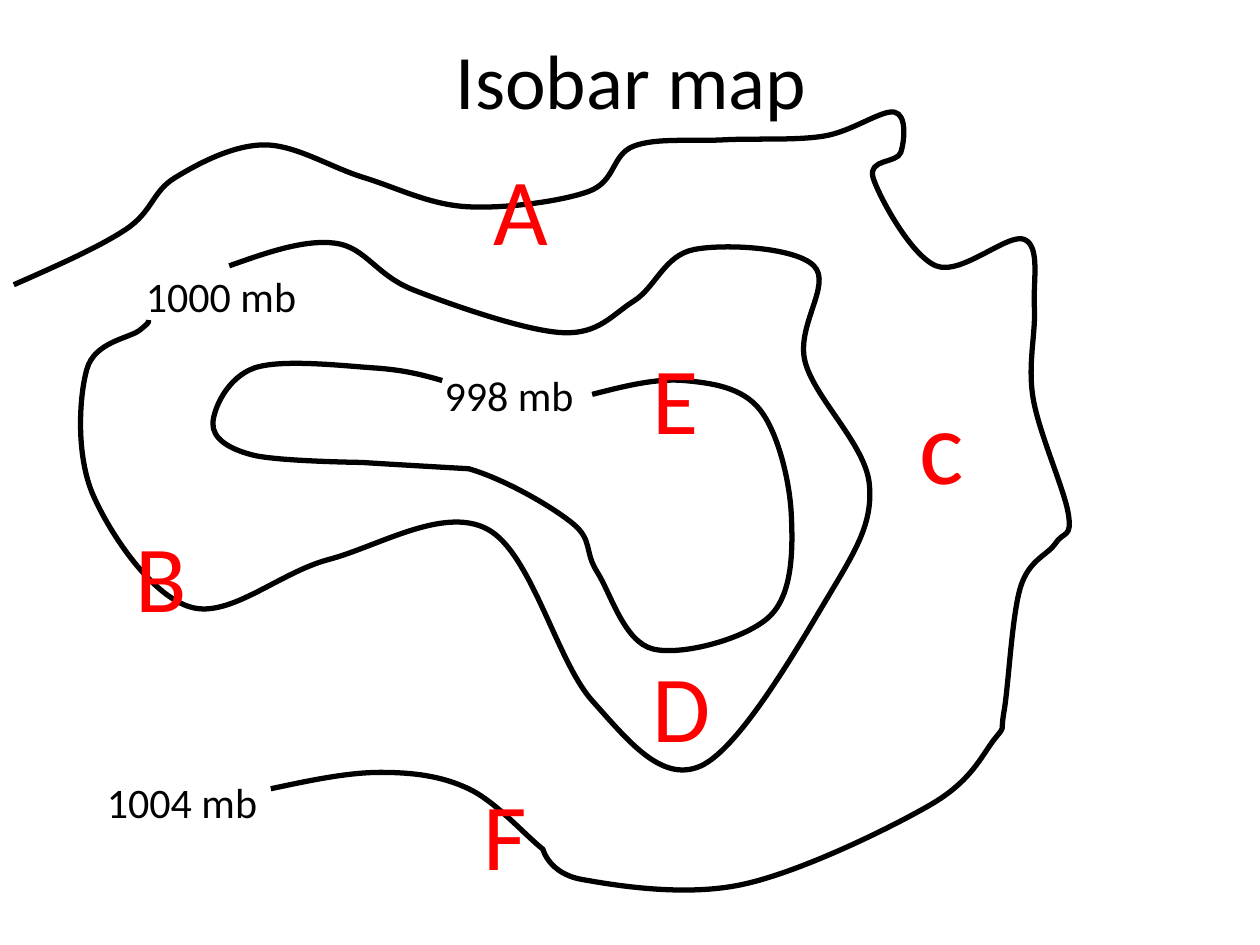
from dataclasses import dataclass

from pptx import Presentation
from pptx.dml.color import RGBColor
from pptx.enum.text import MSO_ANCHOR, MSO_AUTO_SIZE, PP_ALIGN
from pptx.oxml.ns import qn
from pptx.util import Inches, Pt

BLACK = RGBColor(0, 0, 0)
RED = RGBColor(255, 0, 0)
FONT = "Calibri"
LINE_SPACING = 1.22
TEXT_PADDING = 0.1
LABEL_WIDTH, LABEL_SIZE = 1.42, 24
LETTER_WIDTH, LETTER_SIZE, LARGE_LETTER_SIZE = 0.79, 54, 60


@dataclass
class Isobar:
    label: str
    label_position: tuple
    knots: list
    corners: tuple = ()


ISOBARS = [
    Isobar("1000 mb", (1.06, 2.1), [
        (1.82, 2.11), (2.66, 1.93), (3.28, 2.3), (4.46, 2.64), (5.03, 2.39),
        (5.51, 1.98), (6.46, 2.11), (6.39, 2.87), (6.9, 3.84), (6.57, 4.74),
        (5.56, 6.08), (4.7, 5.56), (3.87, 4.2), (2.61, 4.44), (1.52, 4.82),
        (0.74, 3.93), (0.69, 2.93), (1.11, 2.62), (1.18, 2.54)]),
    Isobar("1004 mb", (0.75, 6.11), [
        (0.11, 2.26), (1, 1.82), (1.39, 1.41), (2.1, 1.15), (2.89, 1.41),
        (3.7, 1.64), (4.67, 1.52), (5.03, 1.16), (5.74, 1.11), (6.54, 1.08),
        (7.1, 0.89), (7.15, 1.21), (6.93, 1.41), (7.43, 2.11), (8.13, 1.9),
        (8.21, 2.44), (8.2, 3.16), (8.48, 4.08), (8.38, 4.31), (8.1, 4.66),
        (7.97, 5.64), (7.89, 5.87), (7.38, 6.39), (5.89, 7.02), (4.62, 6.98),
        (4.31, 6.74), (3.72, 6.26), (3.02, 6.13), (2.15, 6.26)],
        corners=((4.31, 6.74),)),
    Isobar("998 mb", (3.43, 2.88), [
        (3.51, 3.02), (2.97, 2.92), (2.02, 2.92), (1.69, 3.36), (2, 3.61),
        (2.87, 3.67), (3.72, 3.72), (4.54, 4.15), (4.74, 4.54), (5.18, 5.15),
        (6.11, 4.89), (6.28, 4.08), (6.03, 3.25), (5.43, 3.02), (4.7, 3.13)],
        corners=((2.87, 3.67), (3.72, 3.72))),
]
LETTER_POSITIONS = {
    "c": (7.2, 2.96),
    "B": (0.98, 4.06),
    "A": (3.82, 1.15),
    "D": (5.08, 5.09),
    "E": (5.08, 2.65),
    "F": (3.74, 6.11),
}


def text_height(size):
    return round(size * LINE_SPACING / 72 + TEXT_PADDING, 2)


def add_text(slide, text, position, width, size, color=BLACK):
    left, top = position
    shape = slide.shapes.add_textbox(
        Inches(left), Inches(top), Inches(width), Inches(text_height(size)))
    text_frame = shape.text_frame
    text_frame.word_wrap = True
    text_frame.auto_size = MSO_AUTO_SIZE.SHAPE_TO_FIT_TEXT
    text_frame.text = text
    font = text_frame.paragraphs[0].runs[0].font
    font.name = FONT
    font.size = Pt(size)
    font.color.rgb = color
    return shape


def add_title(slide, text):
    shape = add_text(slide, text, (0.51, 0), 9, 44)
    shape.height = Inches(1.25)
    text_frame = shape.text_frame
    text_frame.auto_size = MSO_AUTO_SIZE.NONE
    text_frame.vertical_anchor = MSO_ANCHOR.MIDDLE
    text_frame.paragraphs[0].alignment = PP_ALIGN.CENTER


def midpoint(first, second):
    return tuple((a + b) / 2 for a, b in zip(first, second))


def handles(previous, knot, following, is_corner):
    offset = [(b - a) / 6 for a, b in zip(previous, following)]
    outgoing = tuple(k + o for k, o in zip(knot, offset))
    incoming = knot if is_corner else tuple(k - o for k, o in zip(knot, offset))
    return incoming, outgoing


def smooth_path(knots, corners):
    inner = [handles(previous, knot, following, knot in corners)
             for previous, knot, following in zip(knots, knots[1:], knots[2:])]
    first_incoming = inner[0][0]
    last_outgoing = inner[-1][1]
    outgoing = [midpoint(knots[0], first_incoming)] + [pair[1] for pair in inner]
    incoming = [pair[0] for pair in inner] + [midpoint(last_outgoing, knots[-1])]
    path_points = [knots[0]]
    for segment in zip(outgoing, incoming, knots[1:]):
        path_points.extend(segment)
    return path_points


def bend_segments(shape):
    lines = list(shape.element.iter(qn("a:lnTo")))
    for curve, second, third in zip(lines[::3], lines[1::3], lines[2::3]):
        curve.tag = qn("a:cubicBezTo")
        for line in (second, third):
            curve.append(line[0])
            line.getparent().remove(line)


def add_curve(slide, knots, corners):
    start, *others = [(Inches(x), Inches(y))
                      for x, y in smooth_path(knots, corners)]
    builder = slide.shapes.build_freeform(*start)
    builder.add_line_segments(others, close=False)
    shape = builder.convert_to_shape()
    bend_segments(shape)
    shape.shadow.inherit = False
    shape.fill.background()
    shape.line.color.rgb = BLACK
    shape.line.width = Pt(3)


def add_isobar(slide, isobar):
    add_curve(slide, isobar.knots, isobar.corners)
    add_text(slide, isobar.label, isobar.label_position,
             LABEL_WIDTH, LABEL_SIZE)


def add_letter(slide, letter, position):
    size = LARGE_LETTER_SIZE if letter.islower() else LETTER_SIZE
    add_text(slide, letter, position, LETTER_WIDTH, size, RED)


def main():
    presentation = Presentation()
    presentation.slide_width = Inches(10)
    presentation.slide_height = Inches(7.5)
    slide = presentation.slides.add_slide(presentation.slide_layouts[6])
    add_title(slide, "Isobar map")
    for isobar in ISOBARS:
        add_isobar(slide, isobar)
    for letter, position in LETTER_POSITIONS.items():
        add_letter(slide, letter, position)
    presentation.save("out.pptx")


if __name__ == "__main__":
    main()
